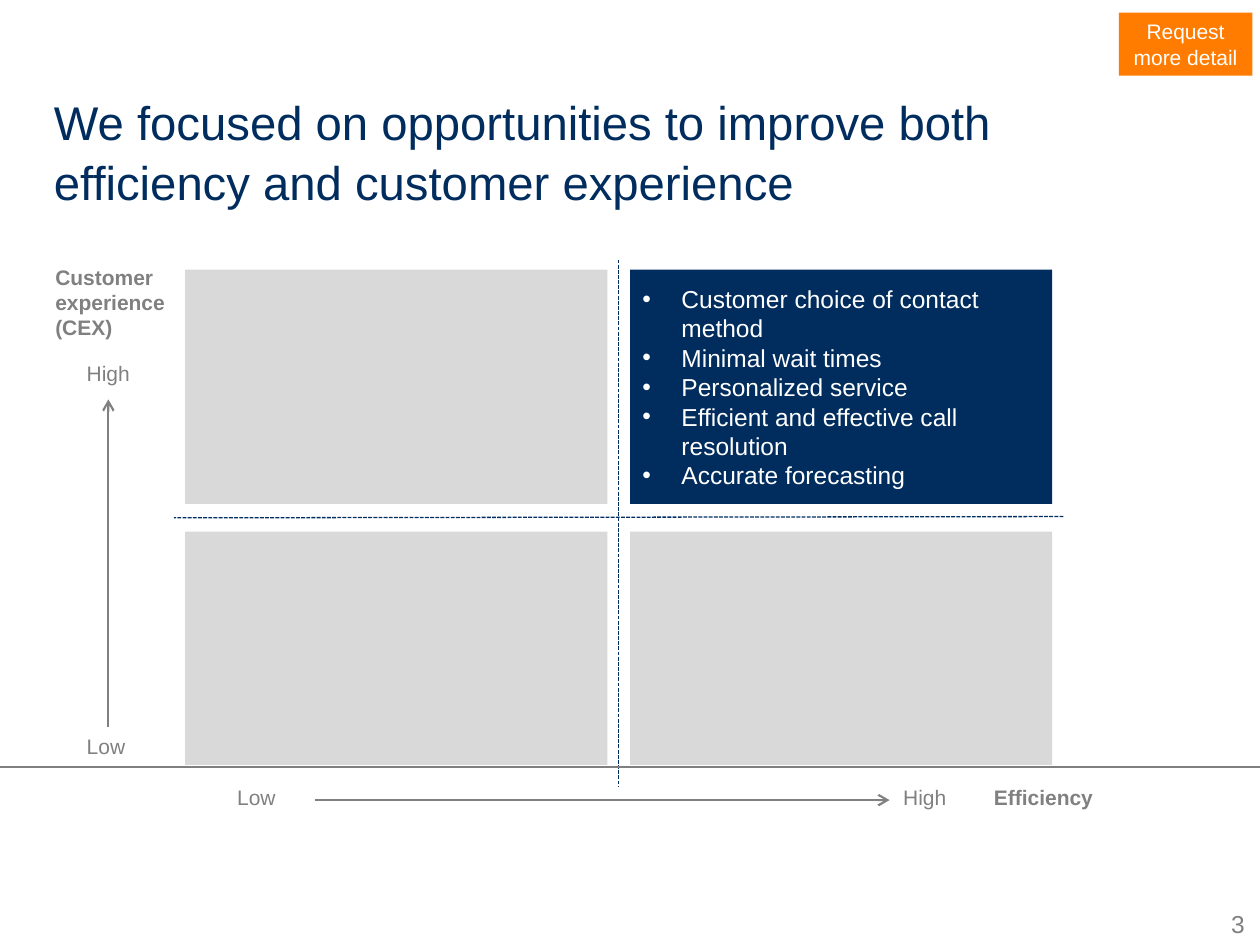
from typing import NamedTuple

from lxml import etree
from pptx import Presentation
from pptx import util as u
from pptx.dml.color import RGBColor
from pptx.enum import dml, shapes, text
from pptx.oxml.ns import qn

NAVY, GREY, PALE, WHITE = "002D5E", "808080", "D9D9D9", "FFFFFF"
LEFT, MID, RIGHT = text.PP_ALIGN.LEFT, text.PP_ALIGN.CENTER, text.PP_ALIGN.RIGHT


class Label(NamedTuple):
    words: str
    box: tuple
    size: float = 12
    hue: str = GREY
    bold: bool = False
    align: text.PP_ALIGN = LEFT
    pitch: float = 1.0


class Line(NamedTuple):
    start: tuple
    end: tuple
    hue: str = GREY
    width: float = 1.25
    dash: bool = False
    arrow: bool = False


LABELS = [
    Label("We focused on opportunities to improve both efficiency and customer experience",
          (0.33, 0.67, 8.45, 1.01), 27, NAVY, pitch=1.05),
    Label("Customer experience (CEX)", (0.34, 2.05, 1.12, 0.71), bold=True),
    Label("Efficiency", (7.79, 6.18, 1.63, 0.3), bold=True),
    Label("High", (0.59, 2.81, 0.54, 0.3)),
    Label("Low", (0.59, 5.77, 0.54, 0.3)),
    Label("Low", (1.42, 6.18, 1.23, 0.3), align=MID),
    Label("High", (6.61, 6.18, 1.46, 0.3), align=MID),
]
LINES = [
    Line((4.91, 2.06), (4.91, 6.24), "002D62", 0.75, dash=True),
    Line((8.44, 4.1), (1.38, 4.11), "002D62", 0.75, dash=True),
    Line((2.5, 6.35), (7.06, 6.35), arrow=True),
    Line((0.86, 5.77), (0.86, 3.17), arrow=True),
    Line((0, 6.09), (10, 6.09), "7F7F7F"),
]
GOALS = [
    "Customer choice of contact method",
    "Minimal wait times",
    "Personalized service",
    "Efficient and effective call resolution",
    "Accurate forecasting",
]


def color(code: str) -> RGBColor:
    return RGBColor.from_string(code)


def style(para, size: float, hue: str, bold: bool = False, align=LEFT) -> None:
    para.alignment = align
    para.font.name = "Arial"
    para.font.size = u.Pt(size)
    para.font.bold = bold
    para.font.color.rgb = color(hue)


def add_label(slide, label: Label):
    frame = slide.shapes.add_textbox(*map(u.Inches, label.box)).text_frame
    frame.word_wrap = True
    para = frame.paragraphs[0]
    para.text = label.words
    para.line_spacing = label.pitch
    style(para, label.size, label.hue, label.bold, label.align)
    return frame


def add_number(slide) -> None:
    frame = add_label(slide, Label("3", (9.64, 7.28, 0.24, 0.17), 14,
                                   align=RIGHT, pitch=0.7))
    frame.word_wrap = False
    frame.margin_left = frame.margin_right = 0
    frame.margin_top = frame.margin_bottom = 0


def add_box(slide, box: tuple, fill: str):
    shape = slide.shapes.add_shape(shapes.MSO_SHAPE.RECTANGLE, *map(u.Inches, box))
    shape.shadow.inherit = False
    shape.fill.solid()
    shape.fill.fore_color.rgb = color(fill)
    shape.line.fill.background()
    frame = shape.text_frame
    frame.word_wrap = True
    frame.vertical_anchor = text.MSO_ANCHOR.MIDDLE
    return frame


def add_line(slide, line: Line) -> None:
    link = slide.shapes.add_connector(
        shapes.MSO_CONNECTOR.STRAIGHT, *map(u.Inches, line.start + line.end))
    link.line.color.rgb = color(line.hue)
    link.line.width = u.Pt(line.width)
    if line.dash:
        link.line.dash_style = dml.MSO_LINE.SQUARE_DOT
    props = link._element.spPr
    if line.arrow:
        etree.SubElement(props.find(qn("a:ln")), qn("a:tailEnd"), type="arrow")
    etree.SubElement(props, qn("a:effectLst"))


def add_bullets(frame, items: list[str]) -> None:
    for i, item in enumerate(items):
        para = frame.add_paragraph() if i else frame.paragraphs[0]
        para.text = item
        props = para._p.get_or_add_pPr()
        indent = u.Inches(0.31)
        props.set("marL", str(indent))
        props.set("indent", str(-indent))
        etree.SubElement(props, qn("a:buFont"), typeface="Arial")
        etree.SubElement(props, qn("a:buChar"), char="•")
        style(para, 14, WHITE)


def add_grid(slide) -> None:
    """Draw the four quadrants, with the goals in the top right one."""
    for row, top in enumerate((2.14, 4.22)):
        for col, left in enumerate((1.47, 5)):
            focus = (row, col) == (0, 1)
            frame = add_box(slide, (left, top, 3.35, 1.86 - 0.01 * row),
                            NAVY if focus else PALE)
            if focus:
                add_bullets(frame, GOALS)


def main() -> None:
    deck = Presentation()
    deck.slide_width, deck.slide_height = u.Inches(10), u.Inches(7.5)
    slide = deck.slides.add_slide(deck.slide_layouts[6])
    add_number(slide)
    para = add_box(slide, (8.88, 0.1, 1.06, 0.5), "FF7C00").paragraphs[0]
    para.text = "Request more detail"
    style(para, 12, WHITE, align=MID)
    for label in LABELS:
        add_label(slide, label)
    add_grid(slide)
    for line in LINES:
        add_line(slide, line)
    deck.save("out.pptx")


if __name__ == "__main__":
    main()
